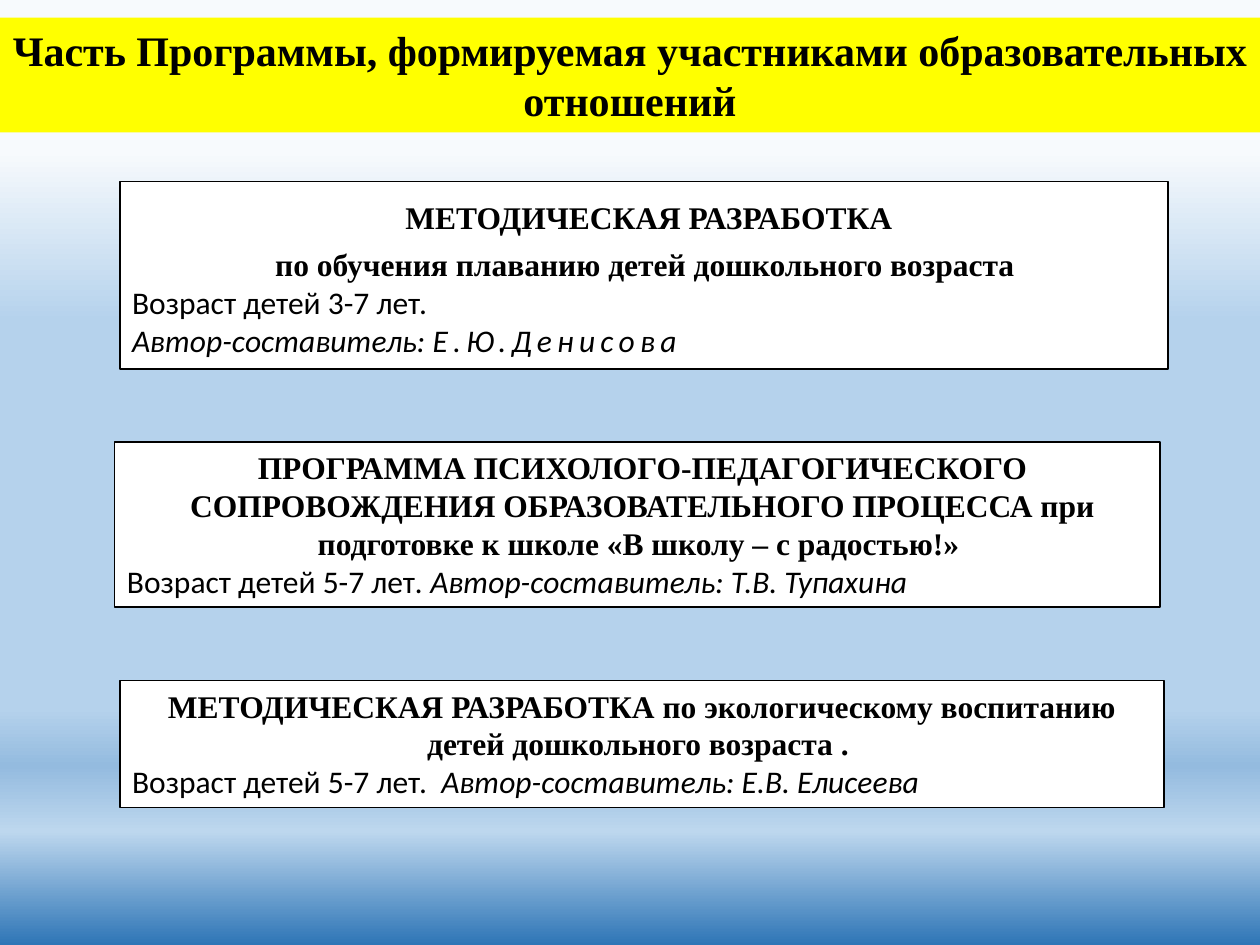
from lxml import etree
from pptx import Presentation
from pptx.dml.color import RGBColor
from pptx.enum import shapes, text
from pptx.oxml.ns import qn
from pptx.util import Inches, Pt

HUES = {"ink": "000000", "paper": "FFFFFF", "band": "FFFF00"}
STOPS = [(16, "F7FAFD"), (34, "B5D2EC"), (75, "B5D2EC"),
         (81, "94BBDF"), (88, "BDD7EE"), (100, "2E75B6")]
SERIF, SANS = "Times New Roman", "Calibri"


def hue(name):
    return RGBColor.from_string(HUES[name])


def style(run, face, size, bold=False, italic=False):
    font = run.font
    font.name, font.size = face, Pt(size)
    font.bold, font.italic = bold, italic
    font.color.rgb = hue("ink")


prs = Presentation()
prs.slide_width, prs.slide_height = Inches(10), Inches(7.5)
slide = prs.slides.add_slide(prs.slide_layouts[5])

# Background gradient, top to bottom
fill = slide.background.fill
fill.gradient()
fill.gradient_angle = 270
stops = slide.element.find(".//" + qn("a:gsLst"))
for old in list(stops):
    stops.remove(old)
for pos, code in STOPS:
    stop = etree.SubElement(stops, qn("a:gs"), pos=str(pos * 1000))
    etree.SubElement(stop, qn("a:srgbClr"), val=code)

# Title band
title = slide.shapes.title
title.left, title.top = Inches(0), Inches(0.14)
title.width, title.height = Inches(10), Inches(0.91)
title.fill.solid()
title.fill.fore_color.rgb = hue("band")
frame = title.text_frame
frame.text = "Часть Программы, формируемая участниками образовательных отношений"
frame.auto_size = text.MSO_AUTO_SIZE.NONE
frame.word_wrap = True
frame.paragraphs[0].alignment = text.PP_ALIGN.CENTER
style(frame.paragraphs[0].runs[0], SERIF, 24, bold=True)

# Programme cards: place, top inset, left indent, line pitch, headings, details
# Each detail line is a list of (text, italic, letter spacing)
CARDS = [
    ((0.95, 1.44, 8.32, 1.49), 0.24, 0.08, 13.6,
     ["МЕТОДИЧЕСКАЯ РАЗРАБОТКА",
      "по обучения плаванию детей дошкольного возраста "],
     [[("Возраст детей 3-7 лет.", False, 0)],
      [("Автор-составитель: ", True, 0), ("Е.Ю.Денисова", True, 3)]]),
    ((0.91, 3.51, 8.3, 1.31), 0.05, 0.08, None,
     ["ПРОГРАММА ПСИХОЛОГО-ПЕДАГОГИЧЕСКОГО СОПРОВОЖДЕНИЯ "
      "ОБРАЗОВАТЕЛЬНОГО ПРОЦЕССА при подготовке к школе "
      "«В школу – с радостью!» "],
     [[("Возраст детей 5-7 лет", False, 0),
       (". Автор-составитель: Т.В. Тупахина", True, 0)]]),
    ((0.95, 5.4, 8.29, 1.01), 0.05, 0, None,
     ["МЕТОДИЧЕСКАЯ РАЗРАБОТКА по экологическому воспитанию "
      "детей дошкольного возраста . "],
     [[("Возраст детей 5-7 лет.  ", False, 0),
       ("Автор-составитель: Е.В. Елисеева", True, 0)]]),
]

for place, inset, indent, pitch, heads, lines in CARDS:
    card = slide.shapes.add_shape(shapes.MSO_SHAPE.RECTANGLE,
                                  *[Inches(v) for v in place])
    card.shadow.inherit = False
    card.fill.solid()
    card.fill.fore_color.rgb = hue("paper")
    card.line.color.rgb = hue("ink")
    card.line.width = Pt(1)
    frame = card.text_frame
    frame.word_wrap = True
    frame.vertical_anchor = text.MSO_ANCHOR.TOP
    frame.margin_top = Inches(inset)

    # Headings
    frame.text = "\n".join(heads)
    for i, para in enumerate(frame.paragraphs):
        para.alignment = text.PP_ALIGN.CENTER
        para._p.get_or_add_pPr().set("marL", str(Inches(indent)))
        if pitch:
            para.line_spacing = Pt(pitch)
            para.space_before = Pt(pitch if i else 0)
        style(para.runs[0], SERIF, 18, bold=True)

    # Age and author
    for line in lines:
        para = frame.add_paragraph()
        para.alignment = text.PP_ALIGN.LEFT
        for words, italic, gap in line:
            run = para.add_run()
            run.text = words
            style(run, SANS, 18, italic=italic)
            if gap:
                run.font._element.set("spc", str(gap * 100))

prs.save("out.pptx")
